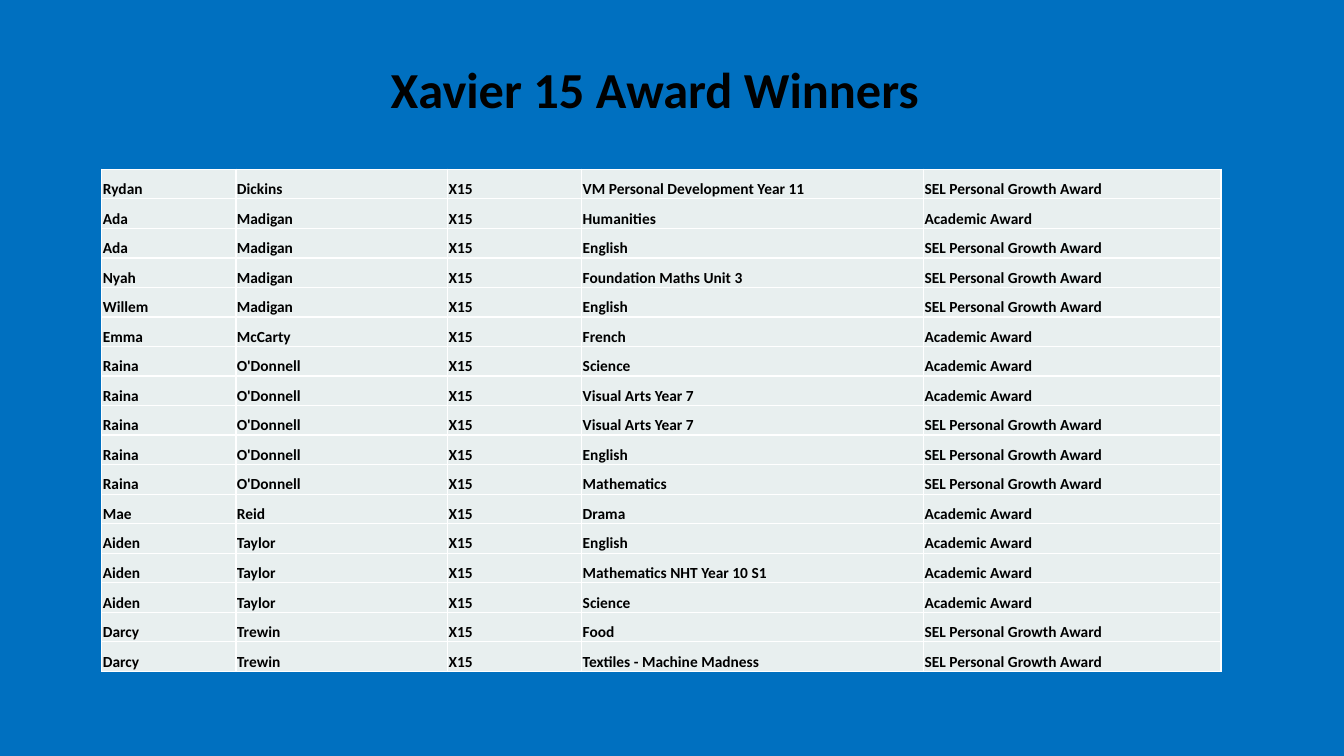
"""Build the Xavier 15 award winners slide."""
from lxml.etree import SubElement
from pptx import Presentation
from pptx.dml.color import RGBColor
from pptx.enum.text import MSO_ANCHOR, PP_ALIGN
from pptx.oxml.ns import qn
from pptx.util import Inches, Pt

TITLE = "Xavier 15 Award Winners"
CLASS_NAME = "X15"
ACADEMIC = "Academic Award"
GROWTH = "SEL Personal Growth Award"
WINNERS = [
    ("Rydan", "Dickins", "VM Personal Development Year 11", GROWTH),
    ("Ada", "Madigan", "Humanities", ACADEMIC),
    ("Ada", "Madigan", "English", GROWTH),
    ("Nyah", "Madigan", "Foundation Maths Unit 3", GROWTH),
    ("Willem", "Madigan", "English", GROWTH),
    ("Emma", "McCarty", "French", ACADEMIC),
    ("Raina", "O'Donnell", "Science", ACADEMIC),
    ("Raina", "O'Donnell", "Visual Arts Year 7", ACADEMIC),
    ("Raina", "O'Donnell", "Visual Arts Year 7", GROWTH),
    ("Raina", "O'Donnell", "English", GROWTH),
    ("Raina", "O'Donnell", "Mathematics", GROWTH),
    ("Mae", "Reid", "Drama", ACADEMIC),
    ("Aiden", "Taylor", "English", ACADEMIC),
    ("Aiden", "Taylor", "Mathematics NHT Year 10 S1", ACADEMIC),
    ("Aiden", "Taylor", "Science", ACADEMIC),
    ("Darcy", "Trewin", "Food", GROWTH),
    ("Darcy", "Trewin", "Textiles - Machine Madness", GROWTH),
]
COLUMN_WIDTHS = [1.33, 2.1, 1.33, 3.39, 2.95]
TABLE_LEFT, TABLE_TOP, TABLE_HEIGHT = 1.01, 1.68, 4.98
COLORS = {"background": "0070C0", "cell": "E8EFEF", "border": "FFFFFF", "text": "000000"}
FONT = "Calibri"


def write_text(text_frame, text, size, align=PP_ALIGN.LEFT, line_spacing=1.0):
    paragraph = text_frame.paragraphs[0]
    paragraph.alignment = align
    paragraph.line_spacing = line_spacing
    run = paragraph.add_run()
    run.text = text
    run.font.name = FONT
    run.font.size = Pt(size)
    run.font.bold = True
    run.font.color.rgb = RGBColor.from_string(COLORS["text"])


def add_borders(cell):
    properties = cell._tc.get_or_add_tcPr()
    for position, side in enumerate(("a:lnL", "a:lnR", "a:lnT", "a:lnB")):
        line = SubElement(properties, qn(side), w=str(Pt(1)))
        fill = SubElement(line, qn("a:solidFill"))
        SubElement(fill, qn("a:srgbClr"), val=COLORS["border"])
        properties.insert(position, line)


def format_cell(cell, text):
    cell.fill.solid()
    cell.fill.fore_color.rgb = RGBColor.from_string(COLORS["cell"])
    cell.vertical_anchor = MSO_ANCHOR.BOTTOM
    cell.margin_left = cell.margin_right = cell.margin_top = Inches(0.01)
    cell.margin_bottom = 0
    write_text(cell.text_frame, text, size=11)
    add_borders(cell)


def add_title(slide):
    title = slide.shapes.add_textbox(Inches(0.67), Inches(0.6), Inches(11.65), Inches(1.24))
    title.text_frame.word_wrap = True
    title.text_frame.vertical_anchor = MSO_ANCHOR.TOP
    write_text(title.text_frame, TITLE, size=36, align=PP_ALIGN.CENTER, line_spacing=0.9)


def add_winners_table(slide):
    frame = slide.shapes.add_table(
        len(WINNERS), len(COLUMN_WIDTHS), Inches(TABLE_LEFT), Inches(TABLE_TOP),
        Inches(sum(COLUMN_WIDTHS)), Inches(TABLE_HEIGHT))
    table = frame.table
    table.first_row = table.horz_banding = False
    for column, width in zip(table.columns, COLUMN_WIDTHS):
        column.width = Inches(width)
    for row, (first_name, surname, subject, award) in zip(table.rows, WINNERS):
        row.height = Inches(TABLE_HEIGHT / len(WINNERS))
        for cell, text in zip(row.cells, (first_name, surname, CLASS_NAME, subject, award)):
            format_cell(cell, text)


def main():
    presentation = Presentation()
    presentation.slide_width, presentation.slide_height = Inches(13.33), Inches(7.5)
    slide = presentation.slides.add_slide(presentation.slide_layouts[6])
    slide.background.fill.solid()
    slide.background.fill.fore_color.rgb = RGBColor.from_string(COLORS["background"])
    add_title(slide)
    add_winners_table(slide)
    presentation.save("out.pptx")


if __name__ == "__main__":
    main()
